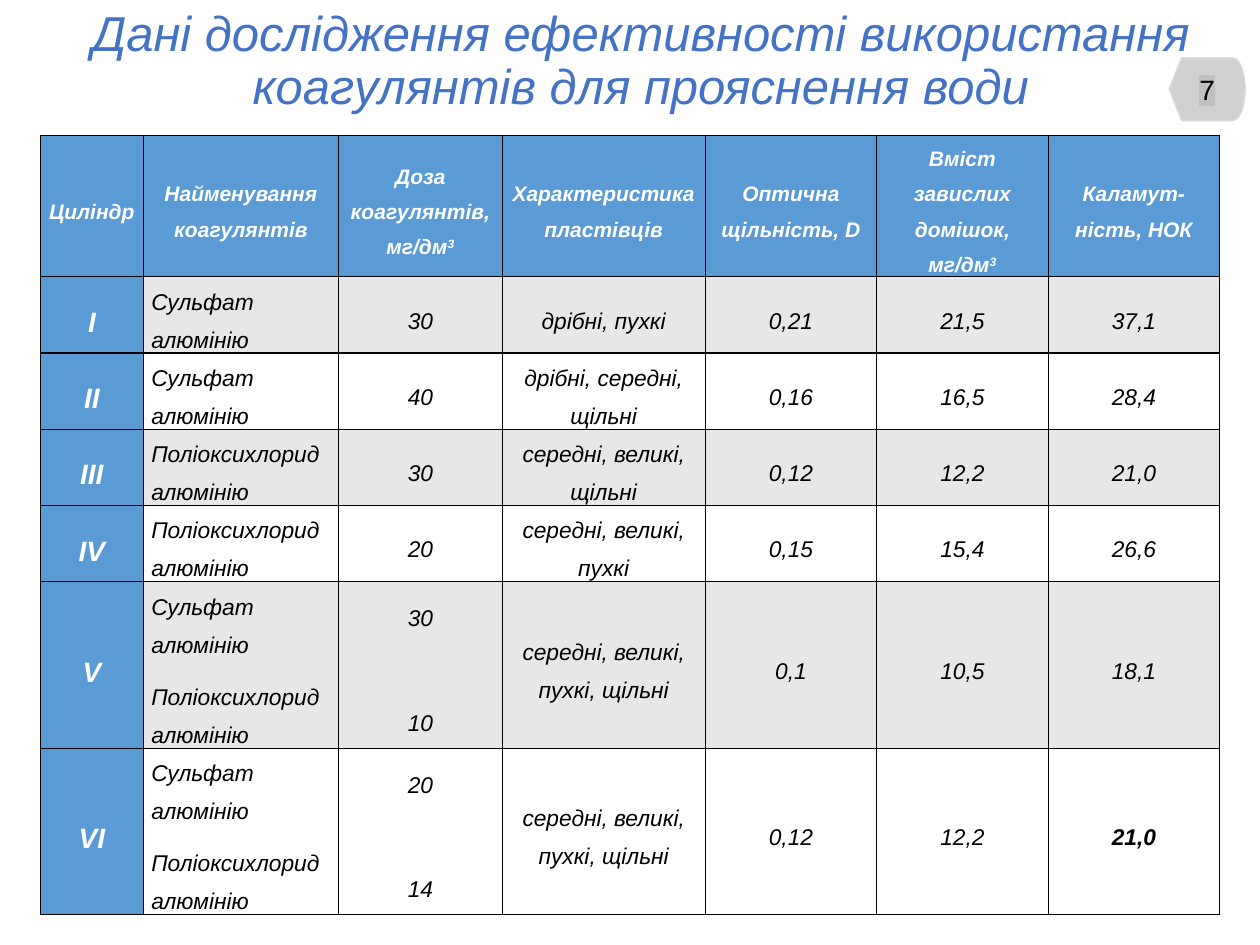
from dataclasses import dataclass

from lxml.etree import SubElement
from pptx import Presentation
from pptx.dml.color import RGBColor as Rgb
from pptx.enum.shapes import MSO_SHAPE as Shape
from pptx.enum.text import MSO_ANCHOR as Anchor, MSO_AUTO_SIZE as AutoSize, PP_ALIGN as Align
from pptx.oxml.ns import qn
from pptx.util import Pt


@dataclass(frozen=True)
class Theme:
    face: str = "Arial"
    title: str = "4472C4"
    accent: str = "5B9BD5"
    band: str = "E7E7E7"
    light: str = "FFFFFF"
    ink: str = "000000"
    badge: str = "A5A5A5"
    badge_line: str = "D6DCE5"
    highlight: str = "C0C0C0"
    title_size: float = 28
    head_size: float = 12
    number_size: float = 16
    body_size: float = 13
    rule: float = 0.75


@dataclass(frozen=True)
class CellStyle:
    size: float
    color: str
    fill: str
    bold: bool = False
    align: Align = Align.CENTER
    anchor: Anchor = Anchor.MIDDLE
    gap: float = 8


@dataclass(frozen=True)
class Trial:
    cylinder: str
    coagulants: str
    dose: str
    flakes: str
    density: str
    solids: str
    turbidity: str
    best: bool = False


THEME = Theme()
TITLE = "Дані дослідження ефективності використання коагулянтів для прояснення води"
# A caret raises the rest of the text; a line break starts a new paragraph.
HEADINGS = (
    "Циліндр", "Найменування коагулянтів", "Доза коагулянтів, мг/дм^3",
    "Характеристика пластівців", "Оптична щільність, D",
    "Вміст завислих домішок, мг/дм^3", "Каламут-ність, НОК",
)
SULFATE = "Сульфат алюмінію"
CHLORIDE = "Поліоксихлорид алюмінію"
BOTH = f"{SULFATE}\n{CHLORIDE}"
TRIALS = (
    Trial("І", SULFATE, "30", "дрібні, пухкі", "0,21", "21,5", "37,1"),
    Trial("ІІ", SULFATE, "40", "дрібні, середні, щільні", "0,16", "16,5", "28,4"),
    Trial("ІІІ", CHLORIDE, "30", "середні, великі, щільні", "0,12", "12,2", "21,0"),
    Trial("ІV", CHLORIDE, "20", "середні, великі, пухкі", "0,15", "15,4", "26,6"),
    Trial("V", BOTH, "30\n10", "середні, великі, пухкі, щільні", "0,1", "10,5", "18,1"),
    Trial("VІ", BOTH, "20\n14", "середні, великі, пухкі, щільні", "0,12", "12,2", "21,0", best=True),
)
COLUMN_WIDTHS = (59, 111.5, 93.5, 116, 98, 98, 98)
HEAD_HEIGHT, SINGLE_HEIGHT, DOUBLE_HEIGHT = 58.5, 31.5, 71.5
DOSE_GAP = 38  # sets each dose beside its own coagulant


def format_run(run, size: float, color: str, bold: bool = False, italic: bool = True) -> None:
    font = run.font
    font.size, font.bold, font.italic = Pt(size), bold, italic
    font.name = THEME.face
    font.color.rgb = Rgb.from_string(color)


def draw_borders(cell) -> None:
    properties = cell._tc.get_or_add_tcPr()
    for side in ("a:lnL", "a:lnR", "a:lnT", "a:lnB"):
        line = SubElement(properties, qn(side), w=str(Pt(THEME.rule)))
        paint = SubElement(line, qn("a:solidFill"))
        SubElement(paint, qn("a:srgbClr"), val=THEME.ink)


def fill_cell(cell, text: str, style: CellStyle) -> None:
    draw_borders(cell)
    cell.fill.solid()
    cell.fill.fore_color.rgb = Rgb.from_string(style.fill)
    cell.margin_left = cell.margin_right = Pt(4.5)
    cell.margin_top = cell.margin_bottom = 0
    cell.vertical_anchor = style.anchor
    lines = text.split("\n")
    cell.text_frame.text = text.replace("^", "")
    for line, paragraph in zip(lines, cell.text_frame.paragraphs):
        paragraph.alignment = style.align
        paragraph.line_spacing = 1.5
        paragraph.space_after = Pt(style.gap)
        base, _, raised = line.partition("^")
        paragraph.runs[0].text = base
        if raised:
            exponent = paragraph.add_run()
            exponent.text = raised
            exponent._r.get_or_add_rPr().set("baseline", "30000")
        for run in paragraph.runs:
            format_run(run, style.size, style.color, style.bold)


def add_title(slide) -> None:
    title = slide.shapes.title
    title.left, title.top, title.width, title.height = Pt(20), 0, Pt(692), Pt(71.5)
    frame = title.text_frame
    frame.text = TITLE
    frame.word_wrap, frame.auto_size = True, AutoSize.NONE
    frame.vertical_anchor = Anchor.MIDDLE
    heading = frame.paragraphs[0]
    heading.alignment, heading.line_spacing = Align.CENTER, 0.9
    format_run(heading.runs[0], THEME.title_size, THEME.title)


def add_trials(slide) -> None:
    holder = slide.shapes.add_table(
        len(TRIALS) + 1, len(HEADINGS), Pt(23), Pt(77.5), Pt(sum(COLUMN_WIDTHS)), Pt(456.5))
    table = holder.table
    table.horz_banding = False
    for column, width in zip(table.columns, COLUMN_WIDTHS):
        column.width = Pt(width)
    table.rows[0].height = Pt(HEAD_HEIGHT)
    head = CellStyle(THEME.head_size, THEME.light, THEME.accent, bold=True)
    for column, heading in enumerate(HEADINGS):
        fill_cell(table.cell(0, column), heading, head)

    number = CellStyle(THEME.number_size, THEME.light, THEME.accent, bold=True)
    for row, trial in enumerate(TRIALS, 1):
        table.rows[row].height = Pt(DOUBLE_HEIGHT if "\n" in trial.dose else SINGLE_HEIGHT)
        body = (THEME.body_size, THEME.ink, THEME.band if row % 2 else THEME.light)
        value = CellStyle(*body)
        contents = (
            (trial.cylinder, number),
            (trial.coagulants, CellStyle(*body, align=Align.JUSTIFY, anchor=Anchor.TOP)),
            (trial.dose, CellStyle(*body, gap=DOSE_GAP) if "\n" in trial.dose else value),
            (trial.flakes, value),
            (trial.density, value),
            (trial.solids, value),
            (trial.turbidity, CellStyle(*body, bold=trial.best)),
        )
        for column, (text, style) in enumerate(contents):
            fill_cell(table.cell(row, column), text, style)
    holder.height = Pt(456.5)


def add_page_badge(slide, page: str) -> None:
    badge = slide.shapes.add_shape(Shape.FLOWCHART_DISPLAY, Pt(668), Pt(33), Pt(43.5), Pt(36))
    badge.shadow.inherit = False
    badge.fill.solid()
    badge.fill.fore_color.rgb = Rgb.from_string(THEME.badge)
    tint = badge._element.spPr.find(qn("a:solidFill")).find(qn("a:srgbClr"))
    SubElement(tint, qn("a:alpha"), val="50000")
    badge.line.color.rgb = Rgb.from_string(THEME.badge_line)
    badge.line.width = Pt(THEME.rule)
    frame = badge.text_frame
    frame.margin_left = frame.margin_right = 0
    frame.vertical_anchor = Anchor.MIDDLE
    frame.text = page
    frame.paragraphs[0].alignment = Align.CENTER
    digit = frame.paragraphs[0].runs[0]
    format_run(digit, THEME.number_size, THEME.ink, italic=False)
    properties = digit._r.get_or_add_rPr()
    marker = SubElement(properties, qn("a:highlight"))
    SubElement(marker, qn("a:srgbClr"), val=THEME.highlight)
    properties.find(qn("a:solidFill")).addnext(marker)


def main() -> None:
    deck = Presentation()
    deck.slide_width, deck.slide_height = Pt(720), Pt(540)
    slide = deck.slides.add_slide(deck.slide_layouts[5])
    add_title(slide)
    add_trials(slide)
    add_page_badge(slide, "7")
    deck.save("out.pptx")


if __name__ == "__main__":
    main()
